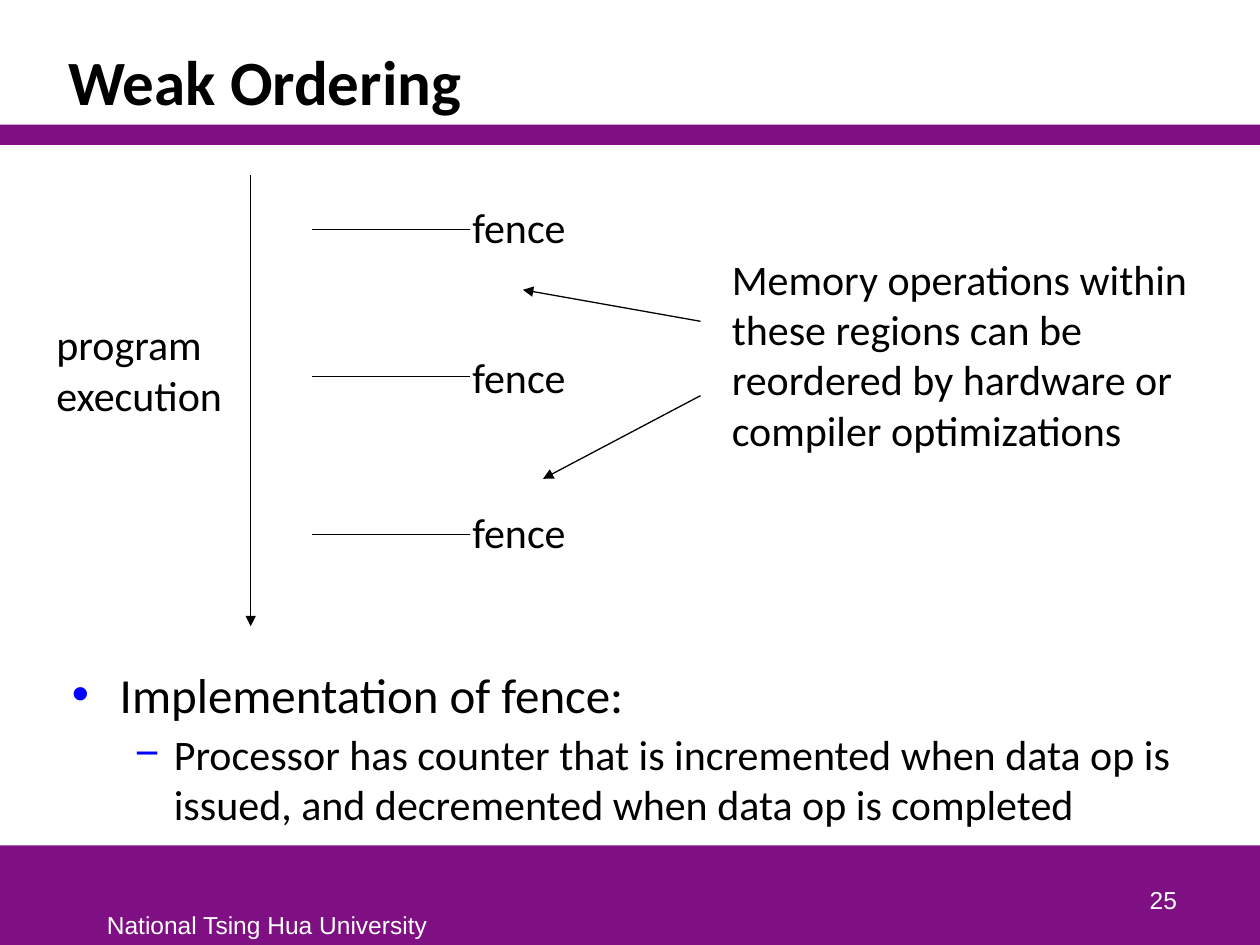
import pptx
import pptx.dml.color
import pptx.enum.shapes
import pptx.enum.text
import pptx.oxml
import pptx.oxml.ns
import pptx.util
from pptx.util import Inches

COLORS = {"purple": "7F1084", "black": "000000", "white": "FFFFFF", "bullet": "0000FF"}
ANCHOR = pptx.enum.text.MSO_ANCHOR
ALIGN = pptx.enum.text.PP_ALIGN


class SlideBuilder:
    """Draws the elements of one slide in a shared style."""

    def __init__(self, slide):
        self.slide = slide
        self.heading_font = "Calibri"
        self.footer_font = "Arial"

    def rgb(self, name):
        return pptx.dml.color.RGBColor.from_string(COLORS[name])

    def format_runs(self, paragraph, size, font=None, color="black", bold=False):
        for run in paragraph.runs:
            run.font.size = pptx.util.Pt(size)
            run.font.name = font or self.heading_font
            run.font.bold = bold
            run.font.color.rgb = self.rgb(color)

    def place(self, holder, left, top, width, height):
        holder.left, holder.top = Inches(left), Inches(top)
        holder.width, holder.height = Inches(width), Inches(height)
        holder.text_frame.auto_size = pptx.enum.text.MSO_AUTO_SIZE.NONE

    def band(self, top, height):
        bar = self.slide.shapes.add_shape(
            pptx.enum.shapes.MSO_SHAPE.RECTANGLE,
            Inches(0), Inches(top), Inches(10), Inches(height))
        bar.shadow.inherit = False
        bar.fill.solid()
        bar.fill.fore_color.rgb = self.rgb("purple")
        bar.line.fill.background()

    def title(self, text, left, top, width, height):
        heading = self.slide.shapes.title
        self.place(heading, left, top, width, height)
        heading.text_frame.text = text
        heading.text_frame.vertical_anchor = ANCHOR.BOTTOM
        paragraph = heading.text_frame.paragraphs[0]
        paragraph.alignment = ALIGN.LEFT
        paragraph.line_spacing = 0.85
        self.format_runs(paragraph, 36, bold=True)

    def bullets(self, items, left, top, width, height):
        body = self.slide.placeholders[1]
        self.place(body, left, top, width, height)
        frame = body.text_frame
        frame.vertical_anchor = ANCHOR.TOP
        for index, (level, text, mark, size, margin, hanging) in enumerate(items):
            paragraph = frame.add_paragraph() if index else frame.paragraphs[0]
            paragraph.text = text
            paragraph.level = level
            paragraph.space_before = pptx.util.Pt(3 if index else 0)
            self.bullet(paragraph, mark, margin, hanging)
            self.format_runs(paragraph, size)

    def bullet(self, paragraph, mark, margin, hanging):
        properties = paragraph._p.get_or_add_pPr()
        properties.set("marL", str(Inches(margin)))
        properties.set("indent", str(-Inches(hanging)))
        namespace = pptx.oxml.ns.nsdecls("a")
        for xml in (
            f'<a:buClr {namespace}><a:srgbClr val="{COLORS["bullet"]}"/></a:buClr>',
            f'<a:buFont {namespace} typeface="Arial"/>',
            f'<a:buChar {namespace} char="{mark}"/>',
        ):
            properties.append(pptx.oxml.parse_xml(xml))

    def label(self, text, left, top, width, height, size=24, font=None,
              color="black", wrap=False, align=ALIGN.LEFT, anchor=ANCHOR.TOP):
        caption = self.slide.shapes.add_textbox(
            Inches(left), Inches(top), Inches(width), Inches(height))
        frame = caption.text_frame
        frame.text = text
        frame.word_wrap = wrap
        frame.vertical_anchor = anchor
        for paragraph in frame.paragraphs:
            paragraph.alignment = align
            self.format_runs(paragraph, size, font, color)

    def line(self, start, end, arrow=False):
        stroke = self.slide.shapes.add_connector(
            pptx.enum.shapes.MSO_CONNECTOR.STRAIGHT,
            *map(Inches, start), *map(Inches, end))
        stroke.line.color.rgb = self.rgb("black")
        stroke.line.width = pptx.util.Pt(0.75)
        namespace = pptx.oxml.ns.nsdecls("a")
        if arrow:
            stroke.line._get_or_add_ln().append(
                pptx.oxml.parse_xml(f'<a:tailEnd {namespace} type="triangle"/>'))
        stroke._element.spPr.append(pptx.oxml.parse_xml(f"<a:effectLst {namespace}/>"))


def main():
    deck = pptx.Presentation()
    deck.slide_width, deck.slide_height = Inches(10), Inches(7.5)
    builder = SlideBuilder(deck.slides.add_slide(deck.slide_layouts[1]))

    builder.band(6.71, 0.79)
    builder.band(0.99, 0.16)
    footer = {"size": 14, "font": builder.footer_font, "color": "white"}
    builder.label("National Tsing Hua University", 0.75, 7.17, 2.76, 0.33, **footer)
    builder.label("25", 7.36, 6.81, 2.08, 0.5, wrap=True,
                  align=ALIGN.RIGHT, anchor=ANCHOR.BOTTOM, **footer)

    builder.title("Weak Ordering", 0.44, 0.25, 8.97, 0.74)
    builder.bullets([
        (0, "Implementation of fence:", "•", 28, 0.38, 0.38),
        (1, "Processor has counter that is incremented when data op is issued, "
            "and decremented when data op is completed", "−", 24, 0.81, 0.31),
    ], 0.47, 5.22, 8.94, 1.44)

    for fence_y, label_top in ((1.82, 1.55), (2.99, 2.74), (4.24, 3.97)):
        builder.line((2.48, fence_y), (3.73, fence_y))
        builder.label("fence", 3.65, label_top, 0.95, 0.5)

    builder.line((1.99, 1.39), (1.99, 4.97), arrow=True)
    builder.label("program\nexecution", 0.35, 2.48, 1.53, 0.91)

    builder.label("Memory operations within these regions can be reordered by "
                  "hardware or compiler optimizations", 5.71, 1.96, 3.86, 1.72, wrap=True)
    builder.line((5.56, 2.55), (4.15, 2.3), arrow=True)
    builder.line((5.56, 3.14), (4.31, 3.8), arrow=True)

    deck.save("out.pptx")


if __name__ == "__main__":
    main()
